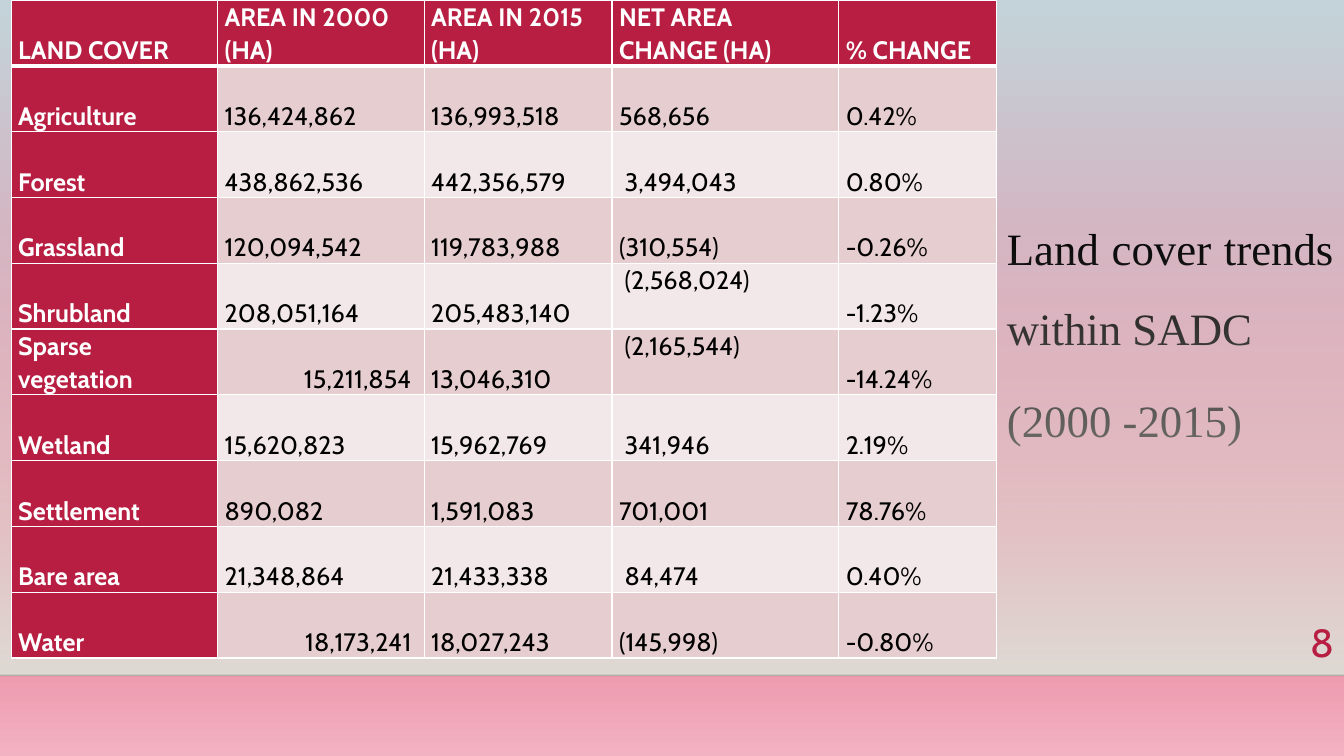
from lxml import etree
from pptx import Presentation
from pptx.dml.color import RGBColor
from pptx.enum.shapes import MSO_CONNECTOR as CONN, MSO_SHAPE as SHAPE
from pptx.enum.text import MSO_ANCHOR as ANCHOR, MSO_AUTO_SIZE as FIT, PP_ALIGN as ALIGN
from pptx.oxml.ns import qn
from pptx.util import Pt


def rgb(color):
    return RGBColor.from_string(color)


def set_gradient(element, stops):
    """Vertical gradient from (position %, colour, opacity %) stops."""
    grad = element.find(".//" + qn("a:gradFill"))
    stop_list = grad.find(qn("a:gsLst"))
    for old in list(stop_list):
        stop_list.remove(old)
    for pos, color, opacity in stops:
        gs = etree.SubElement(stop_list, qn("a:gs"), pos=str(pos * 1000))
        clr = etree.SubElement(gs, qn("a:srgbClr"), val=color)
        if opacity < 100:
            etree.SubElement(clr, qn("a:alpha"), val=str(opacity * 1000))
    grad.find(qn("a:lin")).set("ang", "5400000")


prs = Presentation()
prs.slide_width, prs.slide_height = Pt(960), Pt(540)
s = prs.slides.add_slide(prs.slide_layouts[5])

# Background with a fading wall and a floor line
s.background.fill.gradient()
set_gradient(s.element, [(0, "C3D3D9", 100), (74, "EC8CA3", 100),
                         (83, "EC8CA3", 100), (100, "F2B2C2", 100)])
wall = s.shapes.add_shape(SHAPE.RECTANGLE, 0, Pt(159), Pt(960), Pt(323.4))
wall.shadow.inherit = False
wall.line.fill.background()
wall.fill.gradient()
set_gradient(wall.element, [(0, "DFDBD5", 0), (100, "DFDBD5", 100)])

floor = s.shapes.add_connector(CONN.STRAIGHT, 0, Pt(482.4), Pt(960), Pt(482.4))
floor.line.color.rgb = rgb("000001")
floor.line.width = Pt(1)
line_color = floor.element.find(".//" + qn("a:ln")).find(".//" + qn("a:srgbClr"))
etree.SubElement(line_color, qn("a:alpha"), val="20000")
etree.SubElement(floor.element.spPr, qn("a:effectLst"))

# Land cover table
rows = [
    ["LAND COVER", "AREA IN 2000 (HA)", "AREA IN 2015 (HA)", "NET AREA CHANGE (HA)", "% CHANGE"],
    ["Agriculture", "136,424,862", "136,993,518", "568,656", "0.42%"],
    ["Forest", "438,862,536", "442,356,579", "3,494,043", "0.80%"],
    ["Grassland", "120,094,542", "119,783,988", "(310,554)", "-0.26%"],
    ["Shrubland", "208,051,164", "205,483,140", "(2,568,024)", "-1.23%"],
    ["Sparse vegetation", "15,211,854", "13,046,310", "(2,165,544)", "-14.24%"],
    ["Wetland", "15,620,823", "15,962,769", "341,946", "2.19%"],
    ["Settlement", "890,082", "1,591,083", "701,001", "78.76%"],
    ["Bare area", "21,348,864", "21,433,338", "84,474", "0.40%"],
    ["Water", "18,173,241", "18,027,243", "(145,998)", "-0.80%"],
]
col_widths = [147.5, 147.5, 134.2, 162, 112.8]
right_aligned = {"15,211,854", "18,173,241"}
top_aligned = {"(2,568,024)", "(2,165,544)"}
indented = top_aligned | {"3,494,043", "341,946", "84,474"}

table = s.shapes.add_table(len(rows), len(col_widths), Pt(8), 0,
                           Pt(sum(col_widths)), Pt(47 * len(rows))).table
for col, width in zip(table.columns, col_widths):
    col.width = Pt(width)
for i, row in enumerate(rows):
    table.rows[i].height = Pt(47)
    for j, text in enumerate(row):
        cell = table.cell(i, j)
        heading = i == 0 or j == 0
        # White borders, thicker under the header row
        tc_pr = cell._tc.get_or_add_tcPr()
        for side in "LRTB":
            thick = (i, side) in ((0, "B"), (1, "T"))
            ln = etree.SubElement(tc_pr, qn("a:ln" + side), w=str(Pt(3 if thick else 1)))
            fill = etree.SubElement(ln, qn("a:solidFill"))
            etree.SubElement(fill, qn("a:srgbClr"), val="FFFFFF")
        cell.fill.solid()
        cell.fill.fore_color.rgb = rgb("B71E42" if heading else "E6CDCF" if i % 2 else "F3E8E9")
        cell.margin_left = Pt(9 if text in indented else 5)
        cell.margin_right = Pt(9 if text in right_aligned else 5)
        cell.margin_top = cell.margin_bottom = 0
        cell.vertical_anchor = ANCHOR.TOP if text in top_aligned else ANCHOR.BOTTOM
        p = cell.text_frame.paragraphs[0]
        p.text = text
        p.alignment = ALIGN.RIGHT if text in right_aligned else ALIGN.LEFT
        p.line_spacing = 1.07
        p.font.name, p.font.size, p.font.bold = "Cabin", Pt(18), heading
        p.font.color.rgb = rgb("FFFFFF" if heading else "000000")

# Title beside the table
title = s.shapes.title
title.left, title.top, title.width, title.height = Pt(712), Pt(134.6), Pt(248), Pt(190)
tf = title.text_frame
tf.text = "Land cover trends within SADC\n(2000 -2015)"
tf.word_wrap, tf.auto_size, tf.vertical_anchor = True, FIT.NONE, ANCHOR.TOP
for p in tf.paragraphs:
    p.alignment = ALIGN.JUSTIFY
    p.line_spacing, p.space_after = 1.5, Pt(8)
    p.font.name, p.font.size = "Times New Roman", Pt(32)
    p.font.color.rgb = rgb("000000")

# Slide number
tf = s.shapes.add_textbox(Pt(896), Pt(438), Pt(64), Pt(39.6)).text_frame
tf.word_wrap = True
p = tf.paragraphs[0]
p.text = "8"
p.alignment = ALIGN.RIGHT
p.font.name, p.font.size = "Cabin", Pt(28)
p.font.color.rgb = rgb("B71E42")

prs.save("out.pptx")
